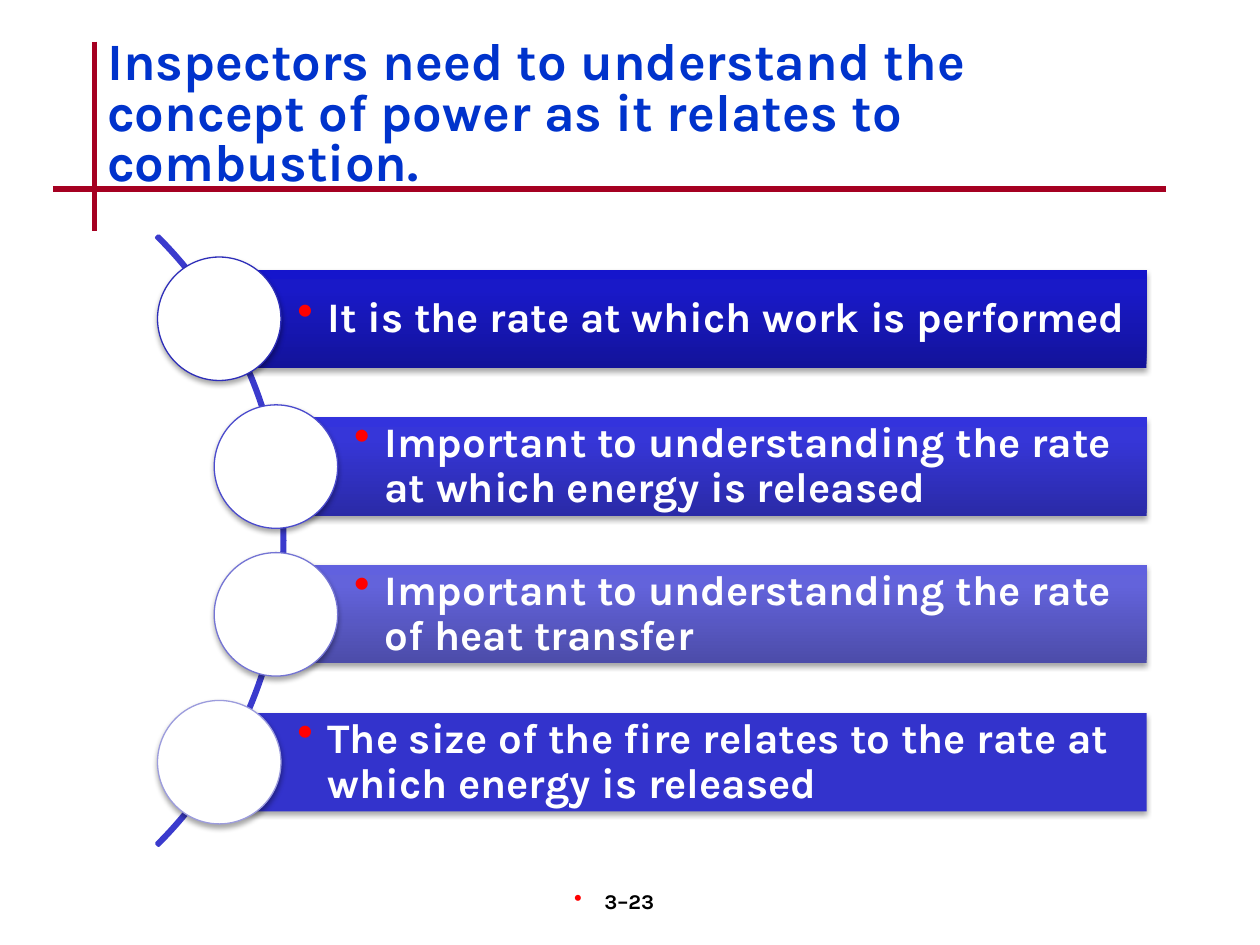
from copy import deepcopy

from lxml.etree import SubElement
from pptx import Presentation
from pptx.dml.color import RGBColor
from pptx.enum.shapes import MSO_CONNECTOR, MSO_SHAPE
from pptx.enum.text import MSO_ANCHOR, MSO_AUTO_SIZE, PP_ALIGN
from pptx.oxml.ns import qn
from pptx.util import Inches, Pt

TITLE = ("Inspectors need to understand the concept of power "
         "as it relates to combustion.")
PAGE_NUMBER = "3–23"
FONT = "Karla"

WHITE = RGBColor(0xFF, 0xFF, 0xFF)
BLACK = RGBColor(0, 0, 0)
TITLE_BLUE = RGBColor(0x00, 0x33, 0xCC)
ARC_BLUE = RGBColor(0x3B, 0x3B, 0xCD)
RULE_RED = RGBColor(0xA5, 0x00, 0x21)
BULLET_RED = "FF0000"

# text, circle centre x, bar colours from bottom to top, circle outline
POINTS = [
    ("It is the rate at which work is performed", 1.74,
     ["13139A", "1919C8", "1515CC"], "2E2EB9"),
    ("Important to understanding the rate at which energy is released", 2.19,
     ["2A2AA7", "3636D9", "3333DD"], "4B4BCD"),
    ("Important to understanding the rate of heat transfer", 2.19,
     ["4C4CA9", "6363DB", "6161DF"], "7474D4"),
    ("The size of the fire relates to the rate at which energy is released",
     1.74, ["3333CC"], "9C9CDD"),
]
GRADIENT_POSITIONS = [0, 0.8, 1]
RULES = [(0.75, 0.33, 0.75, 1.83), (0.42, 1.5, 9.25, 1.5)]

FIRST_CENTER, ROW_PITCH = 2.53, 1.173
BAR_RIGHT, BAR_HEIGHT, CIRCLE_SIZE = 9.1, 0.78, 0.98
ARC_SIZE, ARC_LEFT, ARC_TOP = 6.84, -4.58, 0.87
BULLET_INDENT = 0.24


def style_text(paragraph, size, color):
    for run in paragraph.runs:
        run.font.name = FONT
        run.font.size = Pt(size)
        run.font.bold = True
        run.font.color.rgb = color


def add_bullet(paragraph):
    properties = paragraph._p.get_or_add_pPr()
    properties.set("marL", str(Inches(BULLET_INDENT)))
    properties.set("indent", str(-Inches(BULLET_INDENT)))
    color = SubElement(properties, qn("a:buClr"))
    SubElement(color, qn("a:srgbClr"), val=BULLET_RED)
    SubElement(properties, qn("a:buSzPct"), val="110000")
    SubElement(properties, qn("a:buChar"), char="•")


def add_soft_shadow(shape):
    shape.shadow.inherit = False
    effects = shape._element.spPr.find(qn("a:effectLst"))
    shadow = SubElement(effects, qn("a:outerShdw"), blurRad=str(Pt(3.1)),
                        dist=str(Pt(1.8)), dir="5400000", rotWithShape="0")
    color = SubElement(shadow, qn("a:srgbClr"), val="000000")
    SubElement(color, qn("a:alpha"), val="35000")


def fill_bar(bar, colors):
    """Fill with one colour, or with three running from bottom to top."""
    if len(colors) == 1:
        bar.fill.solid()
        bar.fill.fore_color.rgb = RGBColor.from_string(colors[0])
        return
    bar.fill.gradient()
    bar.fill.gradient_angle = 90
    stop_list = bar._element.spPr.find(qn("a:gradFill")).find(qn("a:gsLst"))
    stop_list.append(deepcopy(stop_list[-1]))
    for stop, position, color in zip(bar.fill.gradient_stops,
                                     GRADIENT_POSITIONS, colors):
        stop.position = position
        stop.color.rgb = RGBColor.from_string(color)


def add_rules(slide):
    for ends in RULES:
        rule = slide.shapes.add_connector(MSO_CONNECTOR.STRAIGHT,
                                          *map(Inches, ends))
        rule.line.color.rgb = RULE_RED
        rule.line.width = Pt(3)
        SubElement(rule._element.spPr, qn("a:effectLst"))


def add_title(slide):
    title = slide.shapes.title
    title.left, title.top, title.width, title.height = map(
        Inches, (0.75, 0.27, 8.5, 1))
    frame = title.text_frame
    frame.text = TITLE
    frame.auto_size = MSO_AUTO_SIZE.NONE
    frame.vertical_anchor = MSO_ANCHOR.TOP
    paragraph = frame.paragraphs[0]
    paragraph.alignment = PP_ALIGN.LEFT
    paragraph.line_spacing = 0.8
    style_text(paragraph, 30, TITLE_BLUE)


def add_arc(slide):
    arc = slide.shapes.add_shape(
        MSO_SHAPE.BLOCK_ARC, Inches(ARC_LEFT), Inches(ARC_TOP),
        Inches(ARC_SIZE), Inches(ARC_SIZE))
    for index, value in enumerate((189, 27, 0.003)):
        arc.adjustments[index] = value
    arc.fill.background()
    arc.line.color.rgb = ARC_BLUE
    arc.line.width = Pt(2)
    arc.shadow.inherit = False


def add_point(slide, center_y, text, center_x, colors, outline):
    bar = slide.shapes.add_shape(
        MSO_SHAPE.RECTANGLE, Inches(center_x),
        Inches(center_y - BAR_HEIGHT / 2),
        Inches(BAR_RIGHT - center_x), Inches(BAR_HEIGHT))
    fill_bar(bar, colors)
    bar.line.fill.background()
    add_soft_shadow(bar)

    frame = bar.text_frame
    frame.text = text
    frame.word_wrap = True
    frame.vertical_anchor = MSO_ANCHOR.MIDDLE
    frame.margin_left = Inches(0.62)
    frame.margin_top = frame.margin_right = frame.margin_bottom = Inches(0.07)
    paragraph = frame.paragraphs[0]
    add_bullet(paragraph)
    paragraph.alignment = PP_ALIGN.LEFT
    paragraph.line_spacing = 0.9
    style_text(paragraph, 24, WHITE)

    circle = slide.shapes.add_shape(
        MSO_SHAPE.OVAL, Inches(center_x - CIRCLE_SIZE / 2),
        Inches(center_y - CIRCLE_SIZE / 2),
        Inches(CIRCLE_SIZE), Inches(CIRCLE_SIZE))
    circle.fill.solid()
    circle.fill.fore_color.rgb = WHITE
    circle.line.color.rgb = RGBColor.from_string(outline)
    circle.line.width = Pt(0.75)
    add_soft_shadow(circle)


def add_page_number(slide):
    footer = slide.shapes.add_textbox(*map(Inches, (3.92, 7, 2.08, 0.5)))
    frame = footer.text_frame
    frame.text = PAGE_NUMBER
    frame.word_wrap = True
    frame.margin_right = Inches(0.27)
    paragraph = frame.paragraphs[0]
    add_bullet(paragraph)
    paragraph.alignment = PP_ALIGN.CENTER
    style_text(paragraph, 12, BLACK)


def main():
    deck = Presentation()
    deck.slide_width, deck.slide_height = Inches(10), Inches(7.5)
    slide = deck.slides.add_slide(deck.slide_layouts[5])
    add_rules(slide)
    add_title(slide)
    add_arc(slide)
    for row, point in enumerate(POINTS):
        add_point(slide, FIRST_CENTER + row * ROW_PITCH, *point)
    add_page_number(slide)
    deck.save("out.pptx")


if __name__ == "__main__":
    main()
